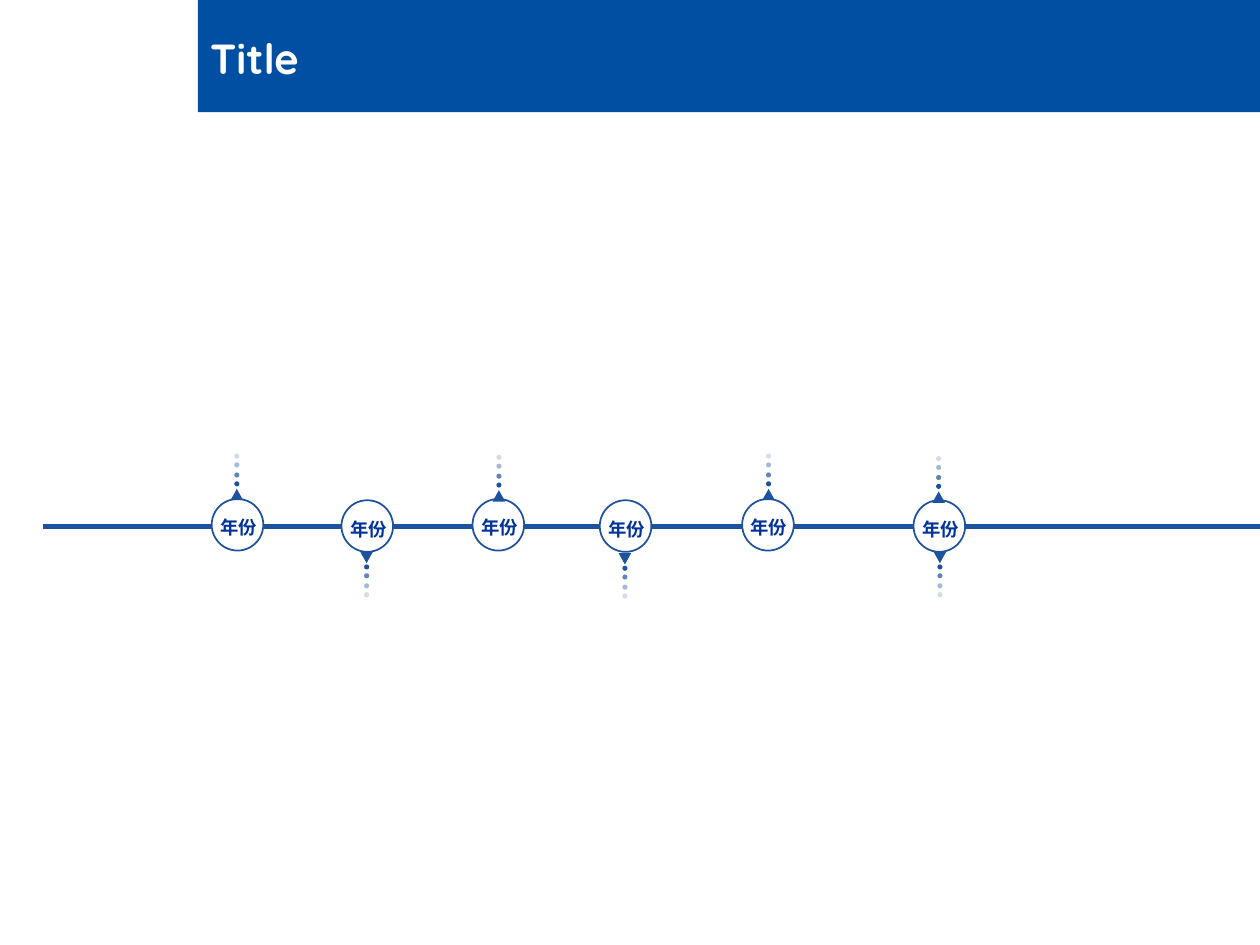
from dataclasses import dataclass

from lxml import etree
from pptx import Presentation
from pptx.dml.color import RGBColor
from pptx.enum.shapes import MSO_CONNECTOR, MSO_SHAPE
from pptx.enum.text import MSO_ANCHOR, MSO_AUTO_SIZE
from pptx.oxml.ns import qn
from pptx.util import Pt

PX = 9144  # EMU per px, 100 px to the inch
RECT, ELLIPSE, TRIANGLE = MSO_SHAPE.RECTANGLE, MSO_SHAPE.OVAL, MSO_SHAPE.ISOSCELES_TRIANGLE
STRAIGHT = MSO_CONNECTOR.STRAIGHT
TOP, MIDDLE = MSO_ANCHOR.TOP, MSO_ANCHOR.MIDDLE
GROW = MSO_AUTO_SIZE.SHAPE_TO_FIT_TEXT


@dataclass(frozen=True)
class Theme:
    banner: str = "014FA2"
    axis: str = "1E529E"
    year: str = "003399"
    white: str = "FFFFFF"
    title_font: str = "Quicksand"
    year_font: str = "Calibri"
    title_size: float = 24
    year_size: float = 10.5
    axis_width: float = 3
    ring_width: float = 1


class Deck:
    def __init__(self, theme, width, height):
        self.theme = theme
        self.prs = Presentation()
        self.prs.slide_width, self.prs.slide_height = width * PX, height * PX
        self.s = self.prs.slides.add_slide(self.prs.slide_layouts[6])

    def group(self):
        return self.s.shapes.add_group_shape().shapes

    def shape(self, kind, x, y, w, h, fill, parent=None, line=None, alpha=100, flip=False):
        shapes = self.s.shapes if parent is None else parent
        sp = shapes.add_shape(kind, x * PX, y * PX, w * PX, h * PX)
        sp.shadow.inherit = False
        sp.fill.solid()
        sp.fill.fore_color.rgb = RGBColor.from_string(fill)
        if alpha < 100:
            clr = sp.element.spPr.find(".//" + qn("a:srgbClr"))
            etree.SubElement(clr, qn("a:alpha"), val=str(alpha * 1000))
        if line:
            sp.line.color.rgb = RGBColor.from_string(line)
            sp.line.width = Pt(self.theme.ring_width)
        else:
            sp.line.fill.background()
        if flip:
            sp.element.spPr.find(qn("a:xfrm")).set("flipV", "1")

    def line(self, x1, y1, x2, y2):
        cxn = self.s.shapes.add_connector(STRAIGHT, x1 * PX, y1 * PX, x2 * PX, y2 * PX)
        cxn.line.color.rgb = RGBColor.from_string(self.theme.axis)
        cxn.line.width = Pt(self.theme.axis_width)
        etree.SubElement(cxn.element.spPr, qn("a:effectLst"))

    def text(self, text, x, y, w, h, *, size, font, color, parent=None,
             anchor=TOP, grow=False, hanging=0, shadow=False):
        shapes = self.s.shapes if parent is None else parent
        tf = shapes.add_textbox(x * PX, y * PX, w * PX, h * PX).text_frame
        tf.word_wrap = not grow
        tf.vertical_anchor = anchor
        if grow:
            tf.auto_size = GROW
        p = tf.paragraphs[0]
        if hanging:
            pPr = p._p.get_or_add_pPr()
            pPr.set("marL", str(hanging * PX))
            pPr.set("indent", str(-hanging * PX))
        r = p.add_run()
        r.text = text
        r.font.size, r.font.bold = Pt(size), True
        r.font.color.rgb = RGBColor.from_string(color)
        if shadow:
            effects = etree.SubElement(r.font._element, qn("a:effectLst"))
            outer = etree.SubElement(effects, qn("a:outerShdw"), dist="25400", dir="2700000")
            etree.SubElement(outer, qn("a:srgbClr"), val="000000")
        r.font.name = font

    def year(self, parent, x, y):
        """Draw a ringed year label with its top left corner at x, y."""
        t = self.theme
        self.shape(ELLIPSE, x, y, 41, 41, t.white, parent, line=t.axis)
        self.text("年份", x - 3, y + 9, 50, 28, parent=parent, grow=True,
                  size=t.year_size, font=t.year_font, color=t.year)

    def pointer(self, x, y, down):
        """Draw a triangle at x, y and the dots that fade away from its tip."""
        parent = self.group()
        first, step = (10, DOT_STEP) if down else (-6, -DOT_STEP)
        for i, alpha in enumerate(DOT_ALPHAS):
            self.shape(ELLIPSE, x + 3, round(y + first + i * step), 4, 4,
                       self.theme.axis, parent, alpha=alpha)
        self.shape(TRIANGLE, x, y, 10, 9, self.theme.axis, parent, flip=down)


DOT_ALPHAS = (100, 70, 40, 20)
DOT_STEP = 7.35
YEARS = [(168, 396), (271, 397), (375, 396), (476, 397), (589, 396), (725, 397)]
POINTERS_UP = [(183, 388), (391, 389), (605, 388), (740, 390)]
POINTERS_DOWN = [(286, 438), (491, 439), (741, 438)]


def main():
    t = Theme()
    deck = Deck(t, 1000, 750)
    deck.shape(RECT, 157, 0, 843, 89, t.banner)
    deck.text("Title", 157, 24, 843, 43, size=t.title_size, font=t.title_font,
              color=t.white, anchor=MIDDLE, hanging=39, shadow=True)
    deck.line(34, 418, 1000, 418)
    years = deck.group()
    for x, y in YEARS:
        deck.year(years, x, y)
    for x, y in POINTERS_UP:
        deck.pointer(x, y, down=False)
    for x, y in POINTERS_DOWN:
        deck.pointer(x, y, down=True)
    deck.prs.save("out.pptx")


if __name__ == "__main__":
    main()
